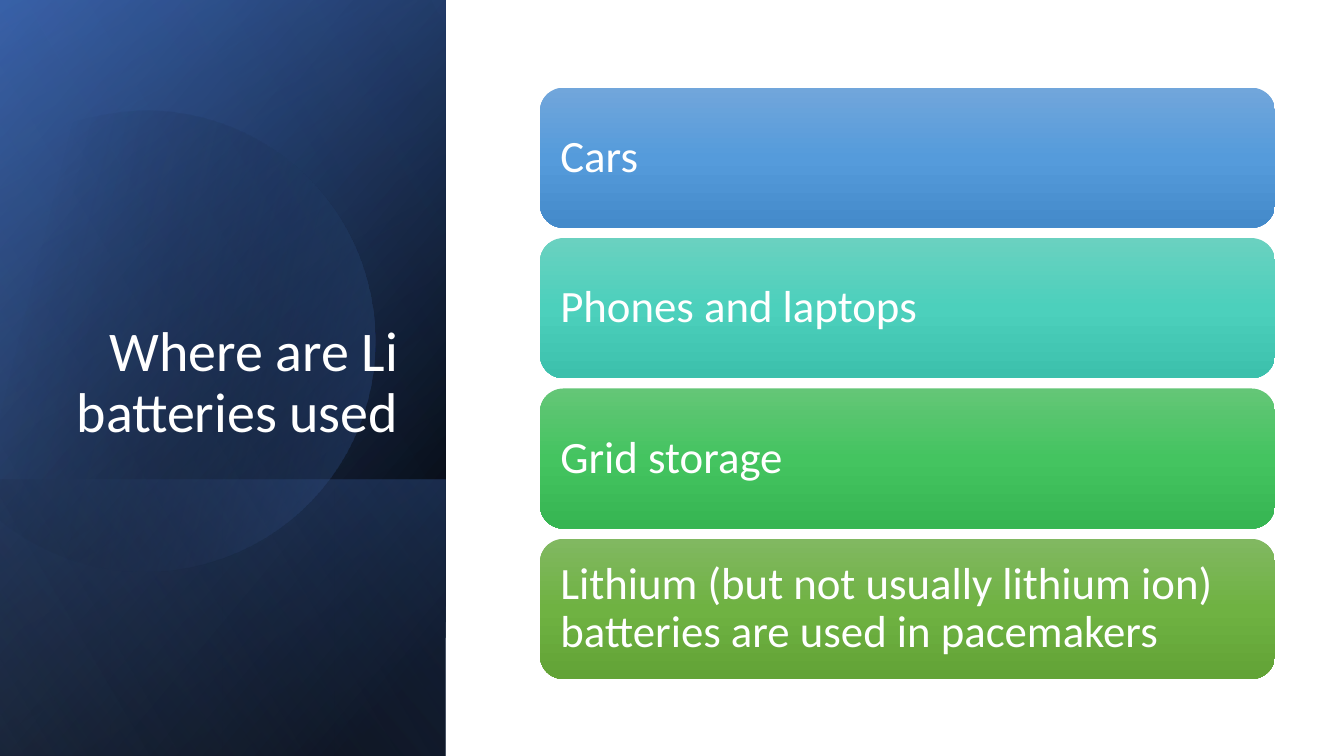
"""Build a slide on where lithium batteries are used."""
from dataclasses import dataclass
from math import cos, radians, sin

from lxml.etree import SubElement as Sub
from pptx import Presentation
from pptx.dml.color import RGBColor as Color
from pptx.enum.shapes import MSO_SHAPE as Shape
from pptx.enum.text import MSO_ANCHOR as Anchor, MSO_AUTO_SIZE as Fit, PP_ALIGN as Align
from pptx.oxml.ns import qn
from pptx.util import Cm, Pt


@dataclass(frozen=True)
class Theme:
    font: str = "Calibri"
    ink: str = "FFFFFF"
    head: int = 40
    body: int = 32
    black: str = "000000"
    navy: str = "2F5597"
    blue: str = "4472C4"
    pale: str = "8FAADC"
    cards: tuple = (
        ("71A6DB", "559BDB", "448ACA"),
        ("6AD1C0", "4CD0BC", "3CC0AC"),
        ("64C677", "44C460", "36B552"),
        ("81B861", "6FB242", "62A336"),
    )


class Deck:
    def __init__(self, theme):
        self.theme = theme
        self.show = Presentation()
        self.show.slide_width, self.show.slide_height = Cm(33.87), Cm(19.05)
        self.slide = self.show.slides.add_slide(self.show.slide_layouts[5])

    def shade(self, shape, stops, angle):
        shape.shadow.inherit = False
        shape.line.fill.background()
        shape.fill.gradient()
        grad = shape._element.spPr.find(qn("a:gradFill"))
        for child in list(grad):
            grad.remove(child)
        row = Sub(grad, qn("a:gsLst"))
        for place, tint, alpha in stops:
            stop = Sub(row, qn("a:gs"), pos=str(place * 1000))
            paint = Sub(stop, qn("a:srgbClr"), val=tint)
            if alpha < 100:
                Sub(paint, qn("a:alpha"), val=str(alpha * 1000))
        Sub(grad, qn("a:lin"), ang=str(angle * 60000), scaled="0")

    def label(self, frame, text, size, align, anchor):
        frame.text = text
        frame.word_wrap = True
        frame.auto_size = Fit.NONE
        frame.vertical_anchor = anchor
        line = frame.paragraphs[0]
        line.alignment = align
        line.line_spacing = 0.9
        font = line.runs[0].font
        font.name, font.size = self.theme.font, Pt(size)
        font.color.rgb = Color.from_string(self.theme.ink)

    def panel(self, box, stops, angle):
        shape = self.slide.shapes.add_shape(Shape.RECTANGLE, *map(Cm, box))
        shape.rotation = 90
        shape._element.spPr.find(qn("a:xfrm")).set("flipH", "1")
        self.shade(shape, stops, angle)

    def disc(self, start, parts, mid, turn, stops, angle):
        points = [start]
        for part in parts:
            if len(part) == 1:
                points += part
                continue
            a, (b, c, d) = points[-1], part
            for step in range(1, 25):
                t = step / 24
                u = 1 - t
                points.append(u**3 * a + 3 * u * u * t * b + 3 * u * t * t * c + t**3 * d)
        spin = complex(cos(radians(-turn)), sin(radians(-turn)))
        spots = [(p - mid) * spin + mid for p in points]
        pairs = [(Cm(p.real), Cm(p.imag)) for p in spots]
        pen = self.slide.shapes.build_freeform(*pairs[0])
        pen.add_line_segments(pairs[1:], close=True)
        shape = pen.convert_to_shape()
        shape.rotation = turn
        self.shade(shape, stops, angle)

    def title(self, text, box):
        shape = self.slide.shapes.title
        shape.left, shape.top, shape.width, shape.height = map(Cm, box)
        self.slide.shapes._spTree.append(shape._element)
        self.label(shape.text_frame, text, self.theme.head, Align.RIGHT, Anchor.BOTTOM)

    def card(self, text, box, tints):
        shape = self.slide.shapes.add_shape(Shape.ROUNDED_RECTANGLE, *map(Cm, box))
        self.shade(shape, [(50 * i, tint, 100) for i, tint in enumerate(tints)], 90)
        frame = shape.text_frame
        frame.margin_left = frame.margin_right = Cm(0.34)
        frame.margin_top = frame.margin_bottom = Cm(0.34)
        self.label(frame, text, self.theme.body, Align.LEFT, Anchor.MIDDLE)


def main():
    theme = Theme()
    deck = Deck(theme)
    side = (-3.91, 3.91, 19.05, 11.23)
    deck.panel(side, [(8, theme.black, 100), (100, theme.navy, 100)], 50)
    deck.panel(side, [(0, theme.black, 0), (99, theme.blue, 46)], 30)
    deck.panel((2.13, 9.96, 6.96, 11.23), [(2, theme.blue, 29), (100, theme.black, 30)], 130)
    curve = (
        (6.25 + 2.84j, 8.51 + 4.5j, 9.22 + 6.99j),
        (10.11 + 10.08j, 8.33 + 13.28j, 5.26 + 14.17j),
        (3.33 + 14.73j, 1.35 + 14.25j, -0.08 + 13.06j),
        (-0.38 + 12.78j,),
        (-0.38 + 4.45j,),
        (4.09j,),
        (0.58 + 3.61j, 1.27 + 3.25j, 2.03 + 3.02j),
        (2.62 + 2.87j, 3.2 + 2.79j, 3.78 + 2.79j),
    )
    deck.disc(3.78 + 2.79j, curve, 4.03 + 8.5j, 343.9,
              [(29, theme.black, 0), (100, theme.blue, 43)], 30)
    deck.panel(side, [(0, theme.black, 0), (99, theme.pale, 11)], 120)
    deck.title("Where are Li batteries used", (1.63, 4.67, 8.66, 6.65))
    uses = (
        "Cars",
        "Phones and laptops",
        "Grid storage",
        "Lithium (but not usually lithium ion) batteries are used in pacemakers",
    )
    for i, (use, tints) in enumerate(zip(uses, theme.cards)):
        deck.card(use, (13.61, 2.21 + 3.79 * i, 18.52, 3.53), tints)
    deck.show.save("out.pptx")


if __name__ == "__main__":
    main()
